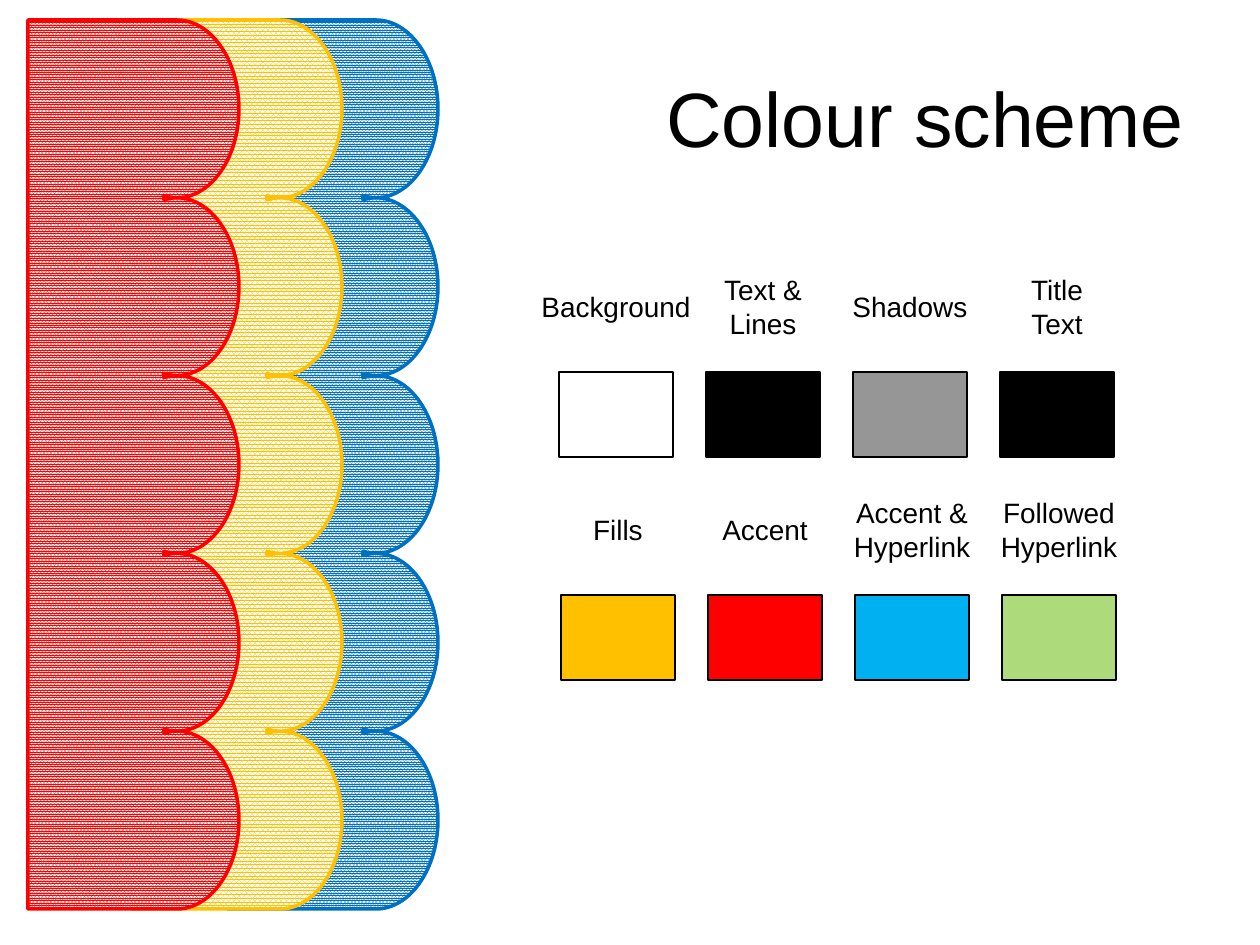
from lxml.etree import SubElement
from pptx import Presentation
from pptx.dml.color import RGBColor
from pptx.enum.dml import MSO_PATTERN
from pptx.enum.shapes import MSO_SHAPE
from pptx.enum.text import MSO_ANCHOR, MSO_AUTO_SIZE, PP_ALIGN
from pptx.oxml.ns import qn
from pptx.util import Emu, Pt

WHITE = RGBColor(0xFF, 0xFF, 0xFF)
BLACK = RGBColor(0x00, 0x00, 0x00)
GREY = RGBColor(0x96, 0x96, 0x96)
AMBER = RGBColor(0xFF, 0xC0, 0x00)
RED = RGBColor(0xFF, 0x00, 0x00)
SKY = RGBColor(0x00, 0xB0, 0xF0)
GREEN = RGBColor(0xAD, 0xDB, 0x7B)
BLUE = RGBColor(0x00, 0x70, 0xC0)

PX_PER_INCH = 126
SWATCH_WIDTH, SWATCH_HEIGHT, SWATCH_PITCH = 114, 85, 147
LABEL_RISE = 65

PANELS = [
    (227, BLUE, MSO_PATTERN.PERCENT_90),
    (131, AMBER, MSO_PATTERN.PERCENT_80),
    (28, RED, MSO_PATTERN.PERCENT_90),
]
SWATCH_ROWS = [
    (559, 372, [("Background", 175, WHITE), ("Text &\nLines", 106, BLACK),
                ("Shadows", 140, GREY), ("Title\vText", 79, BLACK)]),
    (561, 595, [("Fills", 74, AMBER), ("Accent", 111, RED),
                ("Accent &\nHyperlink", 141, SKY), ("Followed\nHyperlink", 141, GREEN)]),
]


def px(length):
    return Emu(round(length * 914400 / PX_PER_INCH))


def scallop_segments(top, height, scallops):
    straight, edge, notch = 149, 211, 136
    radius = height / scallops / 2
    segments = []
    for index in range(scallops):
        start = top + 2 * radius * index
        middle, seam = start + radius, start + 2 * radius
        segments += [
            [(183, start), (edge, middle - 0.55 * radius), (edge, middle)],
            [(edge, middle + 0.55 * radius), (183, seam), (straight, seam)],
        ]
        if index < scallops - 1:
            segments += [
                [(144, seam), (140, seam - 1), (notch, seam - 2)],
                [(notch, seam + 2)],
                [(140, seam + 1), (144, seam), (straight, seam)],
            ]
    bottom = top + height
    corners = [(notch, bottom), (0, bottom), (0, top), (notch, top), (straight, top)]
    return (straight, top), segments + [[corner] for corner in corners]


class SchemeSlide:
    """Holds the type style and the slide that each element is added to."""

    def __init__(self, slide, font="Arial", colour=BLACK):
        self.slide = slide
        self.font = font
        self.colour = colour

    def format_text(self, frame, size, alignment):
        for paragraph in frame.paragraphs:
            paragraph.alignment = alignment
            for run in paragraph.runs:
                run.font.name = self.font
                run.font.size = Pt(size)
                run.font.color.rgb = self.colour

    def title(self, wording, left, top, width, height):
        heading = self.slide.shapes.title
        heading.left, heading.top = px(left), px(top)
        heading.width, heading.height = px(width), px(height)
        heading.text_frame.text = wording
        heading.text_frame.vertical_anchor = MSO_ANCHOR.MIDDLE
        self.format_text(heading.text_frame, 44, PP_ALIGN.RIGHT)

    def curved_outline(self, left, start, segments):
        builder = self.slide.shapes.build_freeform(px(left + start[0]), px(start[1]))
        builder.add_line_segments(
            [(px(left + x), px(y)) for segment in segments for x, y in segment], close=True)
        outline = builder.convert_to_shape()
        vertices = iter(list(outline.element.iter(qn("a:lnTo"))))
        for segment in segments:
            group = [next(vertices) for _ in segment]
            if len(group) == 3:
                curve = SubElement(group[0].getparent(), qn("a:cubicBezTo"))
                group[0].addprevious(curve)
                for vertex in group:
                    curve.append(vertex[0])
                    vertex.getparent().remove(vertex)
        return outline

    def scalloped_panel(self, left, colour, pattern):
        panel = self.curved_outline(left, *scallop_segments(20, 889, 5))
        panel.shadow.inherit = False
        panel.fill.patterned()
        panel.fill.pattern = pattern
        panel.fill.fore_color.rgb = colour
        panel.fill.back_color.rgb = WHITE
        panel.line.color.rgb = colour
        panel.line.width = Pt(2)

    def swatch(self, left, top, colour):
        swatch = self.slide.shapes.add_shape(
            MSO_SHAPE.RECTANGLE, px(left), px(top), px(SWATCH_WIDTH), px(SWATCH_HEIGHT))
        swatch.shadow.inherit = False
        swatch.fill.solid()
        swatch.fill.fore_color.rgb = colour
        swatch.line.color.rgb = BLACK
        swatch.line.width = Pt(0.75)

    def label(self, wording, centre, middle, width):
        height = 47 if len(wording.splitlines()) == 1 else 81
        label = self.slide.shapes.add_textbox(
            px(centre - width / 2), px(middle - height / 2), px(width), px(height))
        frame = label.text_frame
        frame.text = wording
        frame.margin_left = frame.margin_right = px(4)
        frame.word_wrap = False
        frame.auto_size = MSO_AUTO_SIZE.SHAPE_TO_FIT_TEXT
        self.format_text(frame, 16, PP_ALIGN.CENTER)


def main():
    deck = Presentation()
    deck.slide_width, deck.slide_height = px(1260), px(945)
    scheme = SchemeSlide(deck.slides.add_slide(deck.slide_layouts[5]))
    for left, colour, pattern in PANELS:
        scheme.scalloped_panel(left, colour, pattern)
    scheme.title("Colour scheme", 67, 38, 1130, 158)
    for row_left, top, entries in SWATCH_ROWS:
        for column, (wording, width, colour) in enumerate(entries):
            left = row_left + column * SWATCH_PITCH
            scheme.swatch(left, top, colour)
            scheme.label(wording, left + SWATCH_WIDTH / 2, top - LABEL_RISE, width)
    deck.save("out.pptx")


if __name__ == "__main__":
    main()
